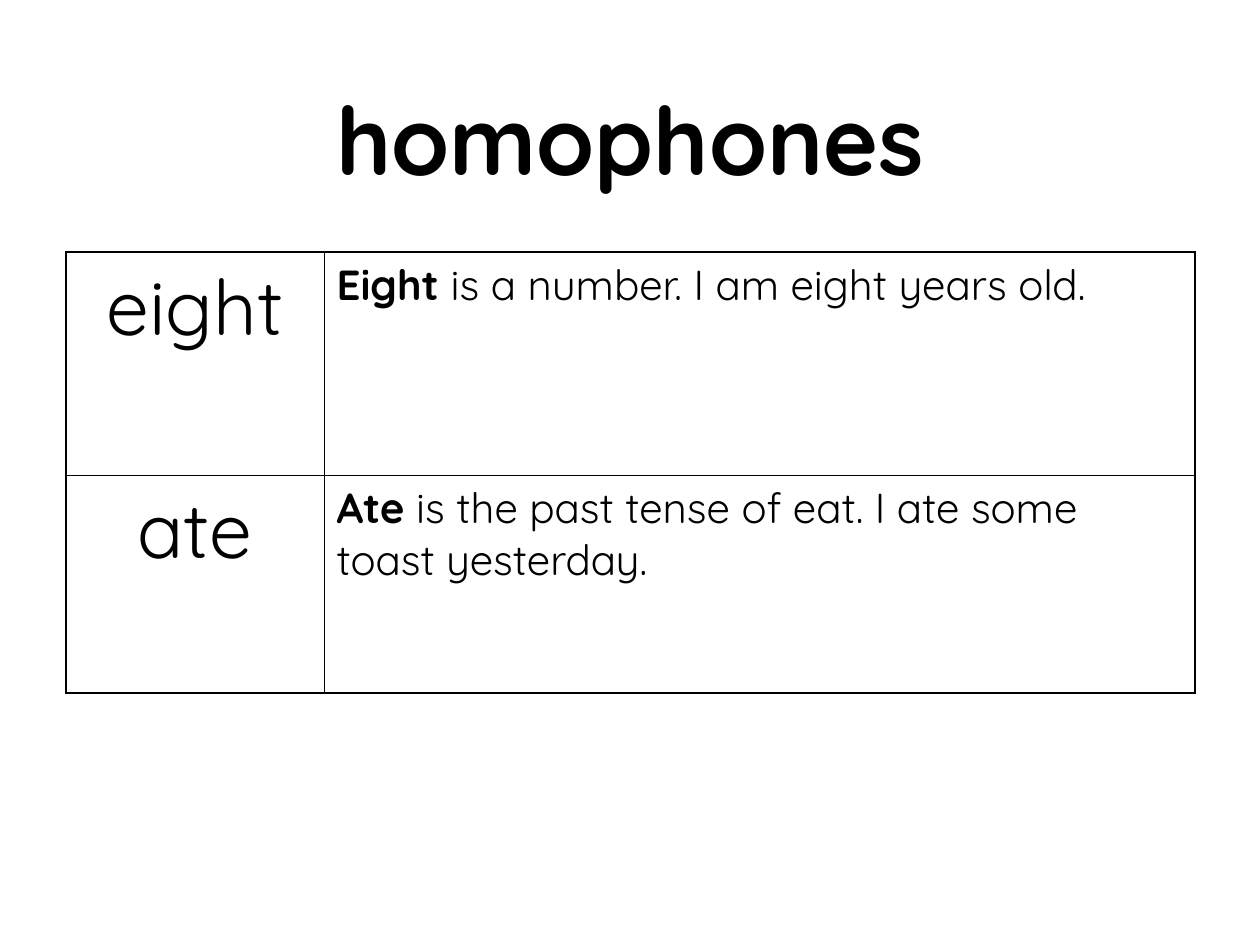
from lxml import etree
from pptx import Presentation
from pptx import util as u
from pptx.dml.color import RGBColor
from pptx.enum import text
from pptx.oxml import ns

PX = 914400 / 126
FONT = "Quicksand"
BLACK = "000000"


def px(n):
    return u.Emu(round(n * PX))


def add_run(p, words, size, bold=False):
    r = p.add_run()
    r.text = words
    for name, value in {"name": FONT, "size": u.Pt(size), "bold": bold}.items():
        setattr(r.font, name, value)
    r.font.color.rgb = RGBColor.from_string(BLACK)


prs = Presentation()
prs.slide_width, prs.slide_height = px(1260), px(945)
s = prs.slides.add_slide(prs.slide_layouts[5])

title = s.shapes.title
for name, value in {"left": 0, "top": 88, "width": 1260, "height": 183}.items():
    setattr(title, name, px(value))
tf = title.text_frame
for name, value in {
    "word_wrap": True,
    "auto_size": text.MSO_AUTO_SIZE.NONE,
    "vertical_anchor": text.MSO_ANCHOR.TOP,
}.items():
    setattr(tf, name, value)
p = tf.paragraphs[0]
p.alignment = text.PP_ALIGN.CENTER
p.line_spacing = 0.9
add_run(p, "homophones", 54, True)

words = [
    ("eight", "Eight ", "is a number. I am eight years old."),
    ("ate", "Ate ", "is the past tense of eat. I ate some toast yesterday."),
]
widths = [258, 871]
heights = [223, 218]
frame = s.shapes.add_table(2, 2, px(66), px(252), px(sum(widths)), px(sum(heights)))
table = frame.table
table.first_row = table.horz_banding = False
for column, width in zip(table.columns, widths):
    column.width = px(width)
for row, height in zip(table.rows, heights):
    row.height = px(height)

for i, (word, lead, meaning) in enumerate(words):
    p = table.cell(i, 0).text_frame.paragraphs[0]
    p.alignment = text.PP_ALIGN.CENTER
    add_run(p, word, 44)
    p = table.cell(i, 1).text_frame.paragraphs[0]
    add_run(p, lead, 24, True)
    add_run(p, meaning, 24)

    for j in range(2):
        cell = table.cell(i, j)
        cell.fill.background()
        tc_pr = cell._tc.get_or_add_tcPr()
        outer = {"L": j == 0, "R": j == 1, "T": i == 0, "B": i == 1}
        for k, (side, is_outer) in enumerate(outer.items()):
            width = u.Pt(1 if is_outer else 0.5)
            ln = etree.Element(ns.qn(f"a:ln{side}"), w=str(width))
            fill = etree.SubElement(ln, ns.qn("a:solidFill"))
            etree.SubElement(fill, ns.qn("a:srgbClr"), val=BLACK)
            tc_pr.insert(k, ln)

prs.save("out.pptx")
